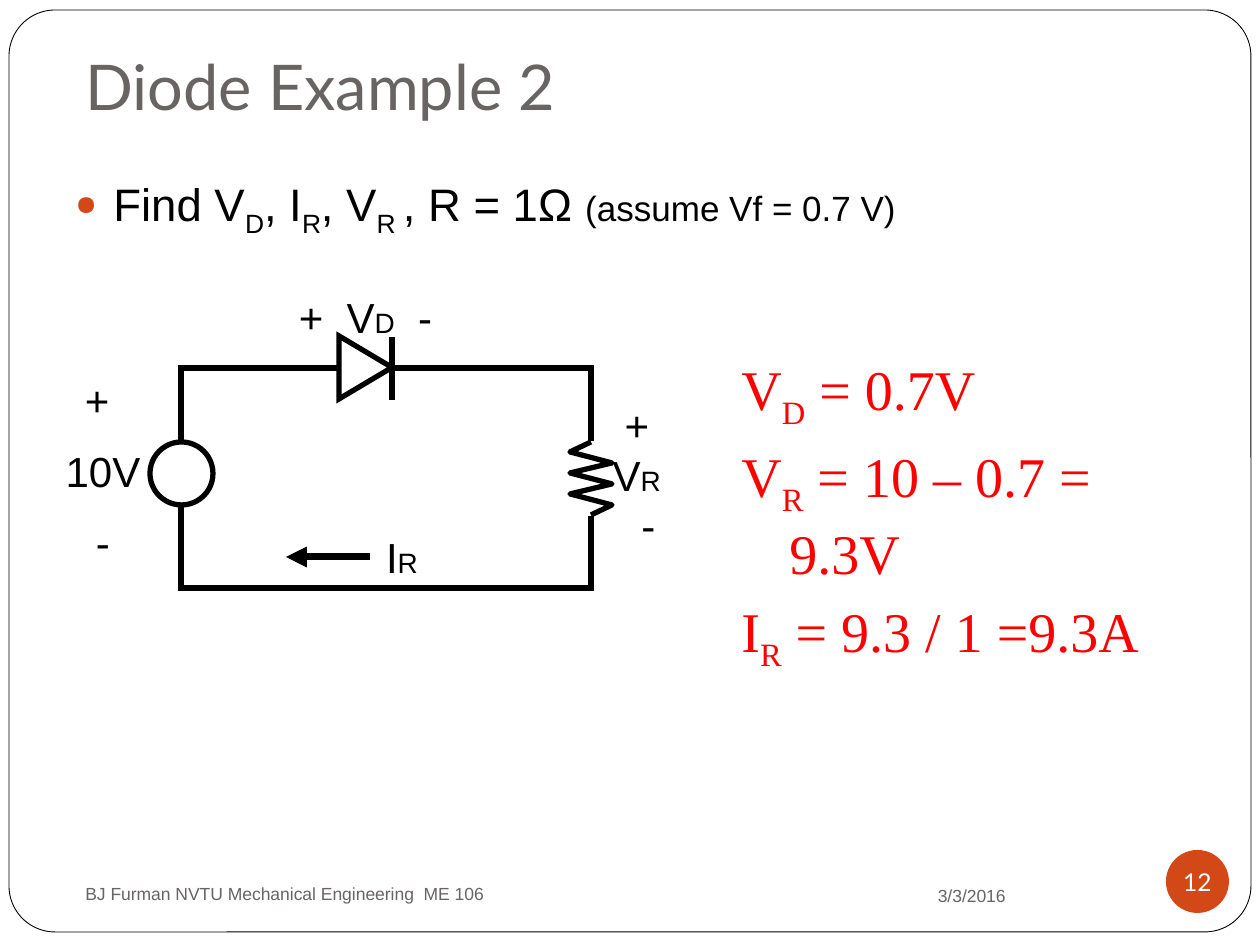
from dataclasses import dataclass
from typing import Optional

from lxml.etree import SubElement
from pptx import Presentation
from pptx.dml.color import RGBColor
from pptx.enum.shapes import MSO_CONNECTOR, MSO_SHAPE
from pptx.enum.text import MSO_ANCHOR, PP_ALIGN
from pptx.oxml.ns import qn
from pptx.util import Emu, Pt

PX = 914400 / 126
COLORS = {
    "black": "000000",
    "white": "FFFFFF",
    "grey": "696464",
    "accent": "D34817",
    "answer": "FF0000",
}


@dataclass
class Run:
    text: str
    size: Optional[int] = None
    subscript: bool = False


@dataclass
class Label:
    box: tuple[int, int, int, int]
    paragraphs: list[list[Run]]


def px(length: float) -> Emu:
    return Emu(round(length * PX))


def color(name: str) -> RGBColor:
    return RGBColor.from_string(COLORS[name])


def style_line(line, name: Optional[str], width: float, join: str = "miter") -> None:
    if name is None:
        line.fill.background()
        return
    line.color.rgb = color(name)
    line.width = Pt(width)
    SubElement(line._get_or_add_ln(), qn(f"a:{join}"))


def style_shape(shape, fill: Optional[str], line: Optional[str], width: float,
                join: str = "miter") -> None:
    shape.shadow.inherit = False
    if fill:
        shape.fill.solid()
        shape.fill.fore_color.rgb = color(fill)
    else:
        shape.fill.background()
    style_line(shape.line, line, width, join)


def add_shape(slide, kind, box, fill=None, line="black", width=3.0):
    shape = slide.shapes.add_shape(kind, *map(px, box))
    style_shape(shape, fill, line, width)
    return shape


def add_line(slide, start, end, width=3.0, arrow=False) -> None:
    connector = slide.shapes.add_connector(
        MSO_CONNECTOR.STRAIGHT, *map(px, (*start, *end)))
    style_line(connector.line, "black", width, "round")
    SubElement(connector._element.spPr, qn("a:effectLst"))
    if arrow:
        SubElement(connector.line._get_or_add_ln(), qn("a:tailEnd"), type="triangle")


def add_bullet(paragraph) -> None:
    properties = paragraph._p.get_or_add_pPr()
    bullet_color = SubElement(properties, qn("a:buClr"))
    SubElement(bullet_color, qn("a:srgbClr"), val=COLORS["accent"])
    SubElement(properties, qn("a:buSzPct"), val="60000")
    SubElement(properties, qn("a:buChar"), char="●")


def write(shape, paragraphs: list[list[Run]], *, size: int, font: str = "Arial",
          ink: str = "black", align=PP_ALIGN.LEFT, anchor=MSO_ANCHOR.TOP,
          first_before: float = 0, before: float = 0, hang: int = 0,
          bullet: bool = False, wrap: bool = True) -> None:
    """Fill the shape with runs; hang is the hanging indent in px."""
    frame = shape.text_frame
    frame.word_wrap = wrap
    frame.vertical_anchor = anchor
    for index, runs in enumerate(paragraphs):
        paragraph = frame.add_paragraph() if index else frame.paragraphs[0]
        paragraph.alignment = align
        paragraph.space_before = Pt(before if index else first_before)
        if hang:
            properties = paragraph._p.get_or_add_pPr()
            properties.set("marL", str(px(hang)))
            properties.set("indent", str(-px(hang)))
        if bullet:
            add_bullet(paragraph)
        for part in runs:
            for row, text in enumerate(part.text.split("\n")):
                if row:
                    paragraph.add_line_break()
                if not text:
                    continue
                run = paragraph.add_run()
                run.text = text
                run.font.name = font
                run.font.size = Pt(part.size or size)
                run.font.color.rgb = color(ink)
                if part.subscript:
                    run._r.get_or_add_rPr().set("baseline", "-25000")


def add_text(slide, box, paragraphs: list[list[Run]], **style):
    text_box = slide.shapes.add_textbox(*map(px, box))
    write(text_box, paragraphs, **style)
    return text_box


def sub(text: str) -> Run:
    return Run(text, subscript=True)


def draw_resistor(slide, center: int, top: int, height: int) -> None:
    swing, segments = 21, 7
    add_shape(slide, MSO_SHAPE.RECTANGLE, (center - 42, top, 84, height),
              "white", "white", 0.75)
    zigzag = [(center + (-swing if step % 2 else swing), top + height * step / segments)
              for step in range(1, segments)]
    builder = slide.shapes.build_freeform(center, top, scale=PX)
    builder.add_line_segments([*zigzag, (center, top + height)], close=False)
    style_shape(builder.convert_to_shape(), None, "black", 3, "round")


def draw_circuit(slide) -> None:
    add_shape(slide, MSO_SHAPE.RECTANGLE, (181, 368, 410, 220))
    add_shape(slide, MSO_SHAPE.OVAL, (150, 442, 63, 63), "white")
    diode = add_shape(slide, MSO_SHAPE.ISOSCELES_TRIANGLE, (334, 341, 63, 53), "white")
    diode.rotation = 90
    add_line(slide, (392, 337), (392, 400))
    draw_resistor(slide, 591, 442, 73)
    add_line(slide, (370, 557), (286, 557), 4, arrow=True)
    labels = [
        Label((276, 285, 179, 63), [[Run("+  V"), Run("D", 16), Run("  -")]]),
        Label((559, 393, 179, 164), [[Run("+  \nV"), Run("R", 16), Run("  \n-")]]),
        Label((339, 525, 126, 63), [[Run("I"), Run("R", 16)]]),
        Label((45, 368, 116, 214), [[Run("+ ")], [Run("10V")], [Run("-")]]),
    ]
    for label in labels:
        add_text(slide, label.box, label.paragraphs, size=24, align=PP_ALIGN.CENTER,
                 first_before=2, before=12)


def main() -> None:
    deck = Presentation()
    deck.slide_width, deck.slide_height = px(1260), px(945)
    slide = deck.slides.add_slide(deck.slide_layouts[6])

    border = add_shape(slide, MSO_SHAPE.ROUNDED_RECTANGLE, (9, 10, 1242, 922),
                       "white", width=0.5)
    border.adjustments[0] = 0.05
    question = [Run("Find V"), sub("D"), Run(", I"), sub("R"), Run(", V"), sub("R "),
                Run(", R = 1Ω "), Run("(assume Vf = 0.7 V)", 20)]
    add_text(slide, (63, 170, 1009, 116), [question], size=26, first_before=4,
             hang=38, bullet=True)
    title = add_text(slide, (73, 38, 1124, 98), [[Run("Diode Example 2")]], size=36,
                     font="Lato", ink="grey", anchor=MSO_ANCHOR.BOTTOM)
    title.text_frame.margin_bottom = px(13)

    draw_circuit(slide)

    answers = [
        [Run("V"), sub("D"), Run(" = 0.7V")],
        [Run("V"), sub("R"), Run(" = 10 – 0.7 = 9.3V")],
        [Run("I"), sub("R"), Run(" = 9.3 / 1 =9.3A")],
    ]
    add_text(slide, (729, 348, 498, 272), answers, size=32, font="Times New Roman",
             ink="answer", first_before=3, before=6.4, hang=48)

    footer = {"size": 10, "ink": "grey", "anchor": MSO_ANCHOR.MIDDLE}
    add_text(slide, (850, 877, 168, 37), [[Run("3/3/2016")]],
             align=PP_ALIGN.RIGHT, **footer)
    add_text(slide, (73, 872, 620, 42),
             [[Run("BJ Furman NVTU Mechanical Engineering  ME 106")]], **footer)
    badge = add_shape(slide, MSO_SHAPE.OVAL, (1166, 850, 63, 63), "accent", None)
    frame = badge.text_frame
    frame.margin_left = frame.margin_right = frame.margin_top = frame.margin_bottom = 0
    write(badge, [[Run("12")]], size=14, font="Lato", ink="white",
          align=PP_ALIGN.CENTER, anchor=MSO_ANCHOR.MIDDLE, wrap=False)

    deck.save("out.pptx")


if __name__ == "__main__":
    main()
